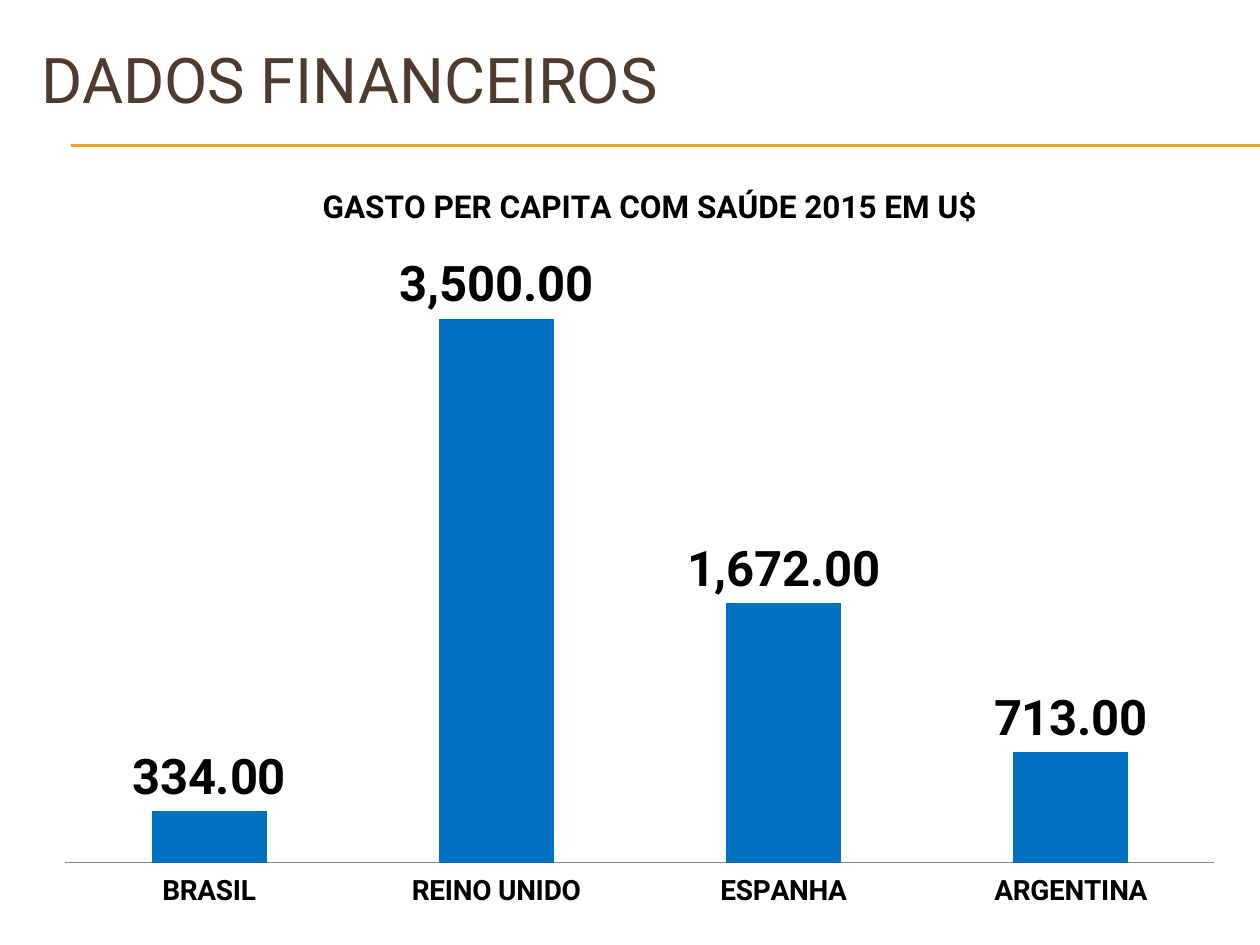
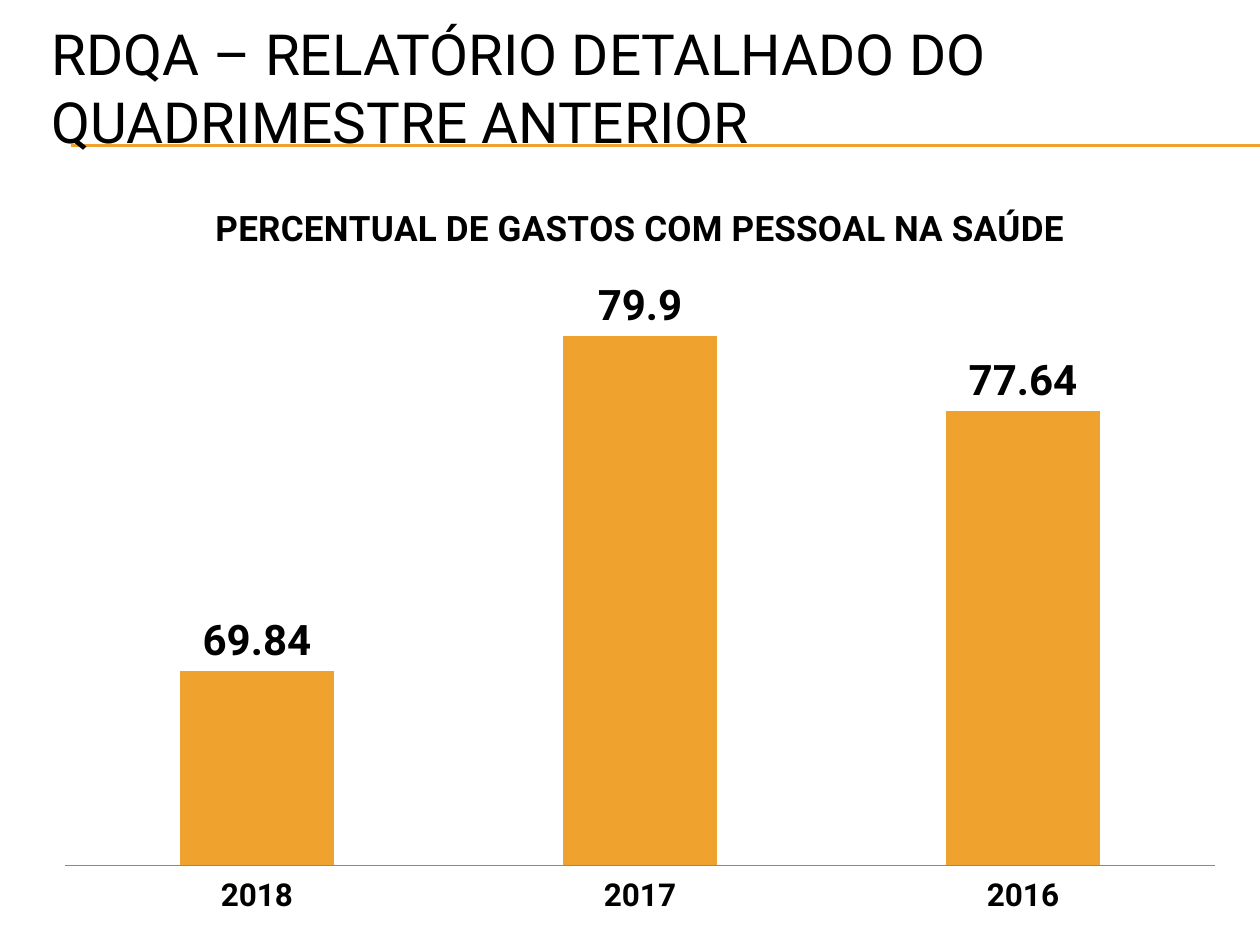
from lxml import etree
from pptx import Presentation
from pptx.chart.data import CategoryChartData
from pptx.dml.color import RGBColor
from pptx.enum.chart import XL_CHART_TYPE, XL_LABEL_POSITION, XL_TICK_LABEL_POSITION, XL_TICK_MARK
from pptx.enum.shapes import MSO_CONNECTOR
from pptx.enum.text import MSO_ANCHOR, MSO_AUTO_SIZE, PP_ALIGN
from pptx.oxml import parse_xml
from pptx.oxml.ns import nsdecls, qn
from pptx.util import Inches, Pt

COLUMNS = XL_CHART_TYPE.COLUMN_CLUSTERED
OUTSIDE_END = XL_LABEL_POSITION.OUTSIDE_END
LABELS_LOW = XL_TICK_LABEL_POSITION.LOW
NO_TICK = XL_TICK_MARK.NONE
STRAIGHT = MSO_CONNECTOR.STRAIGHT
MIDDLE = MSO_ANCHOR.MIDDLE
LEFT = PP_ALIGN.LEFT
NO_AUTOFIT = MSO_AUTO_SIZE.NONE

FONT = "Roboto"
BLACK = "000000"
BROWN = "4E3B30"
ORANGE = "F0A22E"
BLUE = "0070C0"
GRAY = "898989"

PAGES = [
    {
        "title": "DADOS FINANCEIROS",
        "title_at": (0.23, 0.16), "title_size": 36, "title_color": BROWN,
        "chart_top": 1.25,
        "heading": "GASTO PER CAPITA COM SAÚDE 2015 EM U$",
        "heading_size": 18, "heading_at": {"x": 0.23, "y": 0.03},
        "plot_at": {"x": 0.02, "y": 0.11, "w": 0.96, "h": 0.82},
        "values": {"BRASIL": 334, "REINO UNIDO": 3500, "ESPANHA": 1672, "ARGENTINA": 713},
        "scale": (0, 4000), "number_format": "#,##0.00",
        "bar_color": BLUE, "label_size": 28, "category_size": 16,
    },
    {
        "title": "RDQA – RELATÓRIO DETALHADO DO QUADRIMESTRE ANTERIOR",
        "title_at": (0.31, 0.23), "title_size": 32.4, "title_color": BLACK,
        "chart_top": 1.33,
        "heading": "PERCENTUAL DE GASTOS COM PESSOAL NA SAÚDE",
        "heading_size": 20, "heading_at": {"x": 0.14, "y": 0.04},
        "plot_at": {"x": 0.02, "y": 0.13, "w": 0.96, "h": 0.79},
        "values": {"2018": 69.84, "2017": 79.9, "2016": 77.64},
        "scale": (64, 82), "number_format": "General",
        "bar_color": ORANGE, "label_size": 24, "category_size": 18,
    },
]


def style_font(font, size, color, bold=False):
    values = {"name": FONT, "size": Pt(size), "bold": bold}
    for name, value in values.items():
        setattr(font, name, value)
    font.color.rgb = RGBColor.from_string(color)


def place(part, before, edges, inner=False):
    """Fix a chart part at fractions of the chart area, ahead of the tag `before`."""
    for old in part.findall(qn("c:layout")):
        part.remove(old)
    target = '<c:layoutTarget val="inner"/>' if inner else ""
    modes = "".join(f'<c:{edge}Mode val="edge"/>' for edge in "xy")
    sizes = "".join(f'<c:{edge} val="{value}"/>' for edge, value in edges.items())
    layout = parse_xml(
        f'<c:layout {nsdecls("c")}><c:manualLayout>{target}{modes}{sizes}'
        "</c:manualLayout></c:layout>"
    )
    part.find(qn(before)).addprevious(layout)


deck = Presentation()
deck.slide_width, deck.slide_height = Inches(10), Inches(7.5)
title_only = deck.slide_layouts[5]

for content in PAGES:
    page = deck.slides.add_slide(title_only)

    title = page.shapes.title
    title.left, title.top = (Inches(value) for value in content["title_at"])
    title.width, title.height = Inches(9.5), Inches(0.92)
    frame = title.text_frame
    frame.text = content["title"]
    frame.vertical_anchor = MIDDLE
    frame.word_wrap = True
    frame.auto_size = NO_AUTOFIT
    frame.paragraphs[0].alignment = LEFT
    style_font(frame.paragraphs[0].runs[0].font, content["title_size"], content["title_color"])

    for height in (1.15, 1.16):
        rule = page.shapes.add_connector(
            STRAIGHT, Inches(0.56), Inches(height), Inches(10), Inches(height))
        rule.line.color.rgb = RGBColor.from_string(ORANGE)
        rule.line.width = Pt(0.75)
        etree.SubElement(rule.element.spPr, qn("a:effectLst"))
        title.element.addprevious(rule.element)

    data = CategoryChartData()
    data.categories = content["values"].keys()
    data.add_series("Series 1", content["values"].values())
    chart = page.shapes.add_chart(
        COLUMNS, Inches(0.33), Inches(content["chart_top"]), Inches(9.5), Inches(6.02), data).chart
    chart.has_legend = False
    style_font(chart.font, 10, BLACK)

    heading = chart.chart_title
    heading.text_frame.text = content["heading"]
    heading_font = heading.text_frame.paragraphs[0].runs[0].font
    style_font(heading_font, content["heading_size"], BLACK, bold=True)
    heading.include_in_layout = False
    place(heading.format.element if hasattr(heading.format, "element") else heading.element,
          "c:overlay", content["heading_at"])

    plot = chart.plots[0]
    plot.gap_width = 150
    plot.overlap = -25
    plot.vary_by_categories = False
    fill = plot.series[0].format.fill
    fill.solid()
    fill.fore_color.rgb = RGBColor.from_string(content["bar_color"])
    plot.has_data_labels = True
    labels = plot.data_labels
    label_values = {
        "show_value": True,
        "position": OUTSIDE_END,
        "number_format": content["number_format"],
        "number_format_is_linked": False,
    }
    for name, value in label_values.items():
        setattr(labels, name, value)
    style_font(labels.font, content["label_size"], BLACK, bold=True)

    countries_or_years = chart.category_axis
    countries_or_years.major_tick_mark = NO_TICK
    countries_or_years.minor_tick_mark = NO_TICK
    countries_or_years.tick_label_position = LABELS_LOW
    countries_or_years.format.line.color.rgb = RGBColor.from_string(GRAY)
    countries_or_years.format.line.width = Pt(0.75)
    style_font(countries_or_years.tick_labels.font, content["category_size"], BLACK, bold=True)

    amounts = chart.value_axis
    amounts.minimum_scale, amounts.maximum_scale = content["scale"]
    amounts.has_major_gridlines = False
    amounts.visible = False

    plot_area = chart.element.find(".//" + qn("c:plotArea"))
    place(plot_area, "c:barChart", content["plot_at"], inner=True)

deck.save("out.pptx")
